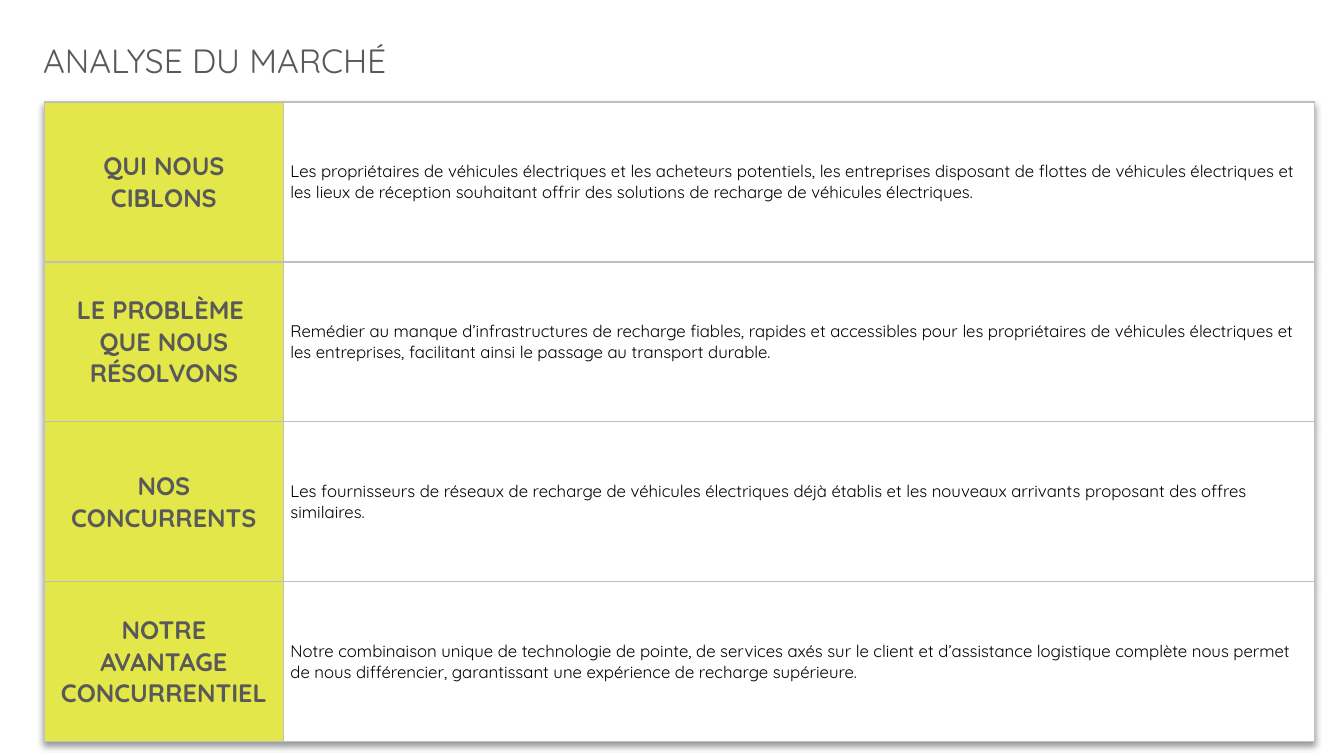
from dataclasses import dataclass

from lxml import etree
from pptx import Presentation, util as u
from pptx.dml.color import RGBColor
from pptx.enum import text
from pptx.oxml import ns


@dataclass(frozen=True)
class Theme:
    """Colours, font and type sizes of the slide."""
    font: str = "Quicksand"
    grey: str = "595959"
    black: str = "000000"
    lime: str = "E3E749"
    white: str = "FFFFFF"
    border: str = "BFBFBF"
    title_size: int = 24
    label_size: int = 18
    body_size: int = 12


ROWS = [
    ("QUI NOUS CIBLONS",
     "Les propriétaires de véhicules électriques et les acheteurs potentiels, les entreprises "
     "disposant de flottes de véhicules électriques et les lieux de réception souhaitant offrir "
     "des solutions de recharge de véhicules électriques."),
    ("LE PROBLÈME \vQUE NOUS RÉSOLVONS",
     "Remédier au manque d’infrastructures de recharge fiables, rapides et accessibles pour les "
     "propriétaires de véhicules électriques et les entreprises, facilitant ainsi le passage au "
     "transport durable."),
    ("NOS CONCURRENTS",
     "Les fournisseurs de réseaux de recharge de véhicules électriques déjà établis et les "
     "nouveaux arrivants proposant des offres similaires."),
    ("NOTRE AVANTAGE CONCURRENTIEL",
     "Notre combinaison unique de technologie de pointe, de services axés sur le client et "
     "d’assistance logistique complète nous permet de nous différencier, garantissant une "
     "expérience de recharge supérieure."),
]


class SlideBuilder:
    """Draws styled elements on one slide."""

    def __init__(self, slide, theme):
        self.slide = slide
        self.theme = theme

    def set_text(self, tf, content, size, color, bold=False, align=text.PP_ALIGN.LEFT):
        """Fill a text frame and format its runs."""
        tf.text = content
        tf.word_wrap = True
        for p in tf.paragraphs:
            p.alignment = align
            for r in p.runs:
                r.font.name = self.theme.font
                r.font.size = u.Pt(size)
                r.font.bold = bold
                r.font.color.rgb = RGBColor.from_string(color)

    def title(self, content, left, top, width, height):
        """Add the slide title."""
        sp = self.slide.shapes.add_textbox(u.Cm(left), u.Cm(top), u.Cm(width), u.Cm(height))
        self.set_text(sp.text_frame, content, self.theme.title_size, self.theme.grey)

    def borders(self, cell):
        """Draw a thin line on every side of a cell."""
        tc_pr = cell._tc.get_or_add_tcPr()
        for i, side in enumerate(("lnL", "lnR", "lnT", "lnB")):
            ln = etree.Element(ns.qn(f"a:{side}"), w=str(u.Pt(1)))
            fill = etree.SubElement(ln, ns.qn("a:solidFill"))
            etree.SubElement(fill, ns.qn("a:srgbClr"), val=self.theme.border)
            tc_pr.insert(i, ln)

    def shadow(self, table):
        """Give the table a soft shadow below."""
        effects = etree.Element(ns.qn("a:effectLst"))
        shadow = etree.SubElement(effects, ns.qn("a:outerShdw"), blurRad="50800",
                                  dist="38100", dir="5400000", algn="t", rotWithShape="0")
        color = etree.SubElement(shadow, ns.qn("a:srgbClr"), val=self.theme.black)
        etree.SubElement(color, ns.qn("a:alpha"), val="40000")
        table._tbl.tblPr.insert(0, effects)

    def cell(self, cell, fill):
        """Prepare the fill, borders and anchor of a cell."""
        cell.fill.solid()
        cell.fill.fore_color.rgb = RGBColor.from_string(fill)
        cell.vertical_anchor = text.MSO_ANCHOR.MIDDLE
        self.borders(cell)

    def table(self, rows, left, top, widths, row_height):
        """Add the table of labels and descriptions."""
        t = self.theme
        table = self.slide.shapes.add_table(
            len(rows), len(widths), u.Cm(left), u.Cm(top),
            u.Cm(sum(widths)), u.Cm(row_height * len(rows))).table
        table.first_row = table.horz_banding = False
        self.shadow(table)
        for column, width in zip(table.columns, widths):
            column.width = u.Cm(width)
        for row, (label, body) in zip(table.rows, rows):
            row.height = u.Cm(row_height)
            label_cell, body_cell = row.cells
            self.cell(label_cell, t.lime)
            self.set_text(label_cell.text_frame, label, t.label_size, t.grey, True,
                          text.PP_ALIGN.CENTER)
            self.cell(body_cell, t.white)
            body_cell.margin_left = body_cell.margin_right = u.Cm(0.18)
            body_cell.margin_top = body_cell.margin_bottom = 0
            self.set_text(body_cell.text_frame, body, t.body_size, t.black)


def main():
    """Build and save the market analysis slide."""
    prs = Presentation()
    prs.slide_width, prs.slide_height = u.Cm(33.87), u.Cm(19.05)
    s = SlideBuilder(prs.slides.add_slide(prs.slide_layouts[6]), Theme())
    s.title("ANALYSE DU MARCHÉ", 0.84, 0.89, 20.52, 1.27)
    s.table(ROWS, 1.12, 2.57, (6.02, 25.98), 4.03)
    prs.save("out.pptx")


if __name__ == "__main__":
    main()
